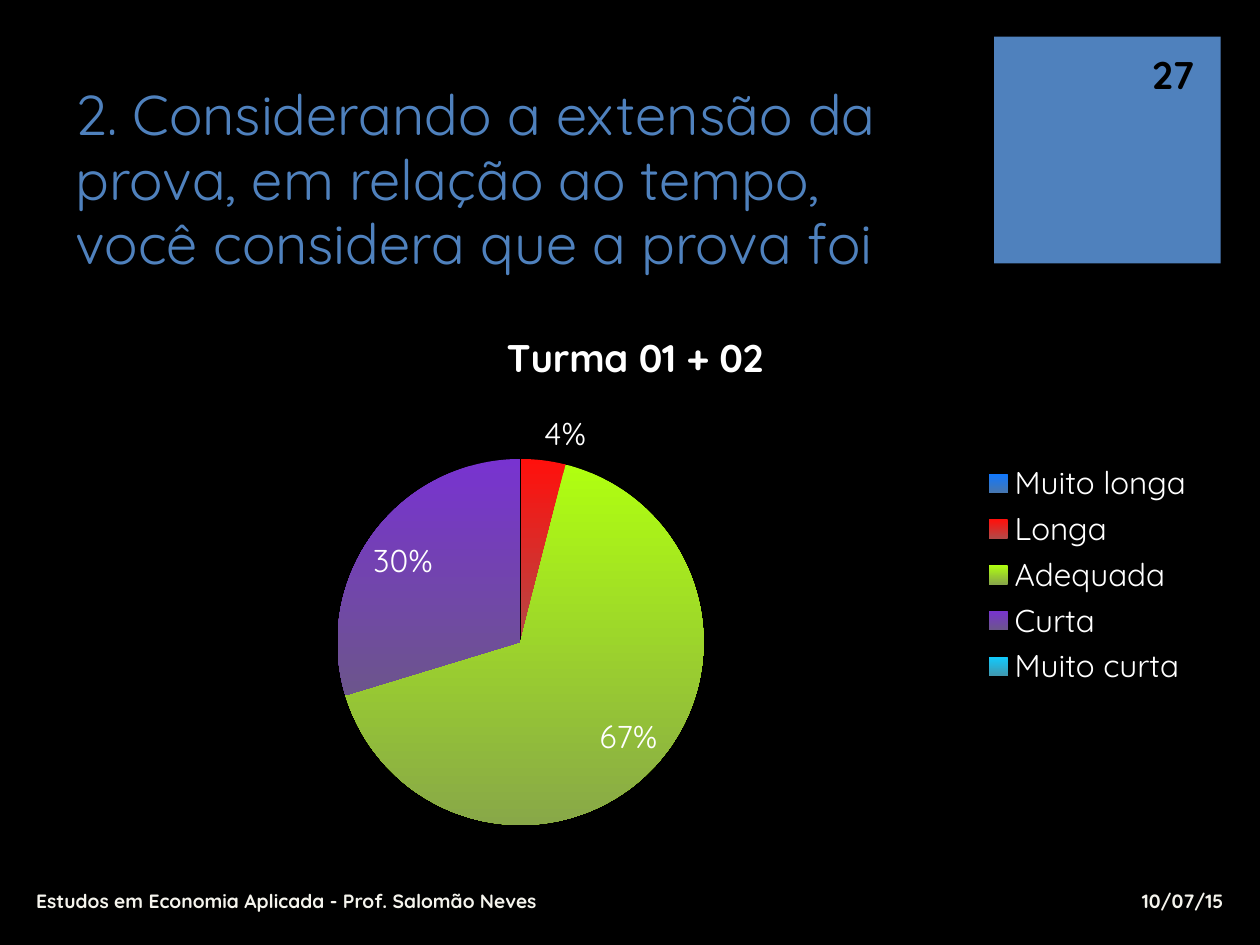
from dataclasses import dataclass

from lxml import etree
from pptx import Presentation
from pptx.chart.data import CategoryChartData
from pptx.dml.color import RGBColor
from pptx.enum.chart import XL_CHART_TYPE, XL_LABEL_POSITION as LabelPos, XL_LEGEND_POSITION as LegendPos
from pptx.enum.shapes import MSO_SHAPE
from pptx.enum.text import MSO_ANCHOR as Anchor, PP_ALIGN as Align
from pptx.oxml.ns import qn
from pptx.util import Cm, Pt


@dataclass(frozen=True)
class Theme:
    """Colours and type sizes of the slide."""
    font: str = "Quicksand"
    back: str = "000000"
    accent: str = "4F81BD"
    footer: str = "F5F4ED"
    light: str = "FFFFFF"
    title_size: int = 32
    number_size: int = 22
    chart_title_size: int = 22
    chart_size: int = 18
    footer_size: int = 11


THEME = Theme()
ANSWERS = [
    ("Muito longa", 0, "1078FF", "4676B0"),
    ("Longa", 4, "FF100C", "B44846"),
    ("Adequada", 67, "B0FF10", "88A848"),
    ("Curta", 30, "7833D0", "6C558C"),
    ("Muito curta", 0, "10CCFF", "3F98B0"),
]


def rgb(value):
    """Turn a hex string into a colour."""
    return RGBColor.from_string(value)


def style(font, size, color, bold=False):
    """Apply the theme typeface with a size and colour."""
    font.name, font.size, font.bold = THEME.font, Pt(size), bold
    font.color.rgb = rgb(color)


def add_text(slide, box, text, size, color, bold=True, align=Align.LEFT, anchor=Anchor.MIDDLE):
    """Place one paragraph of text in a box."""
    tf = slide.shapes.add_textbox(*map(Cm, box)).text_frame
    tf.word_wrap = True
    tf.vertical_anchor = anchor
    p = tf.paragraphs[0]
    p.text = text
    p.alignment = align
    style(p.runs[0].font, size, color, bold)
    return p


def add_header(slide, box):
    """Place the question and the numbered square."""
    x, y, w, h = box
    sp = slide.shapes.add_shape(MSO_SHAPE.RECTANGLE, Cm(x + w - h), Cm(y), Cm(h), Cm(h))
    sp.shadow.inherit = False
    sp.fill.solid()
    sp.fill.fore_color.rgb = rgb(THEME.accent)
    sp.line.fill.background()
    add_text(slide, (x + w - 1.68, y + 0.25, 1.4, 1.02), "27",
             THEME.number_size, THEME.back, align=Align.RIGHT)
    p = add_text(slide, (x, y + 1.8, 18.08, 3.18),
                 "2. Considerando a extensão da prova, em relação ao tempo, você considera que a prova foi",
                 THEME.title_size, THEME.accent, False, anchor=Anchor.BOTTOM)
    p.line_spacing = 0.96


def set_plot_layout(chart, x, y, w, h):
    """Fix the inner plot area as fractions of the chart."""
    area = chart._chartSpace.chart.plotArea
    for old in area.findall(qn("c:layout")):
        area.remove(old)
    layout = etree.Element(qn("c:layout"))
    manual = etree.SubElement(layout, qn("c:manualLayout"))
    settings = {"layoutTarget": "inner", "xMode": "edge", "yMode": "edge",
                "x": x, "y": y, "w": w, "h": h}
    for tag, value in settings.items():
        etree.SubElement(manual, qn(f"c:{tag}")).set("val", str(value))
    area.insert(0, layout)


def add_pie(slide, box):
    """Place the pie of answers with its title, labels and legend."""
    data = CategoryChartData()
    data.categories = [name for name, *_ in ANSWERS]
    data.add_series("Series 1", [value for _, value, *_ in ANSWERS])
    chart = slide.shapes.add_chart(XL_CHART_TYPE.PIE, *map(Cm, box), data).chart
    style(chart.font, THEME.chart_size, THEME.light)
    chart.has_title = True
    tf = chart.chart_title.text_frame
    tf.text = "Turma 01 + 02"
    style(tf.paragraphs[0].runs[0].font, THEME.chart_title_size, THEME.light, True)
    chart.has_legend = True
    chart.legend.position = LegendPos.RIGHT
    chart.legend.include_in_layout = False
    set_plot_layout(chart, 0.24, 0.28, 0.32, 0.69)

    plot = chart.plots[0]
    plot.vary_by_categories = True
    plot.has_data_labels = True
    labels = plot.data_labels
    labels.show_value = True
    labels.number_format = '0"%";;'
    labels.number_format_is_linked = False
    labels.position = LabelPos.BEST_FIT
    style(labels.font, THEME.chart_size, THEME.light)
    for i, (_, _, top, bottom) in enumerate(ANSWERS):
        fill = plot.series[0].points[i].format.fill
        fill.gradient()
        fill.gradient_angle = 270
        for stop, color, position in zip(fill.gradient_stops, (top, bottom), (0, 1)):
            stop.color.rgb = rgb(color)
            stop.position = position


def add_footer(slide, box):
    """Place the course name and the date along the bottom."""
    x, y, w, h = box
    date_w = 4.88
    add_text(slide, (x, y, 16.69, h), "Estudos em Economia Aplicada - Prof. Salomão Neves",
             THEME.footer_size, THEME.footer)
    add_text(slide, (x + w - date_w, y, date_w, h), "10/07/15",
             THEME.footer_size, THEME.footer, align=Align.RIGHT)


def main():
    """Build the slide and save it."""
    prs = Presentation()
    prs.slide_width, prs.slide_height = Cm(25.4), Cm(19.05)
    slide = prs.slides.add_slide(prs.slide_layouts[6])
    slide.background.fill.solid()
    slide.background.fill.fore_color.rgb = rgb(THEME.back)
    add_header(slide, (1.27, 0.74, 23.34, 4.57))
    add_pie(slide, (1.27, 6.15, 23.06, 10.87))
    add_footer(slide, (0.48, 17.65, 24.44, 1.02))
    prs.save("out.pptx")


if __name__ == "__main__":
    main()
